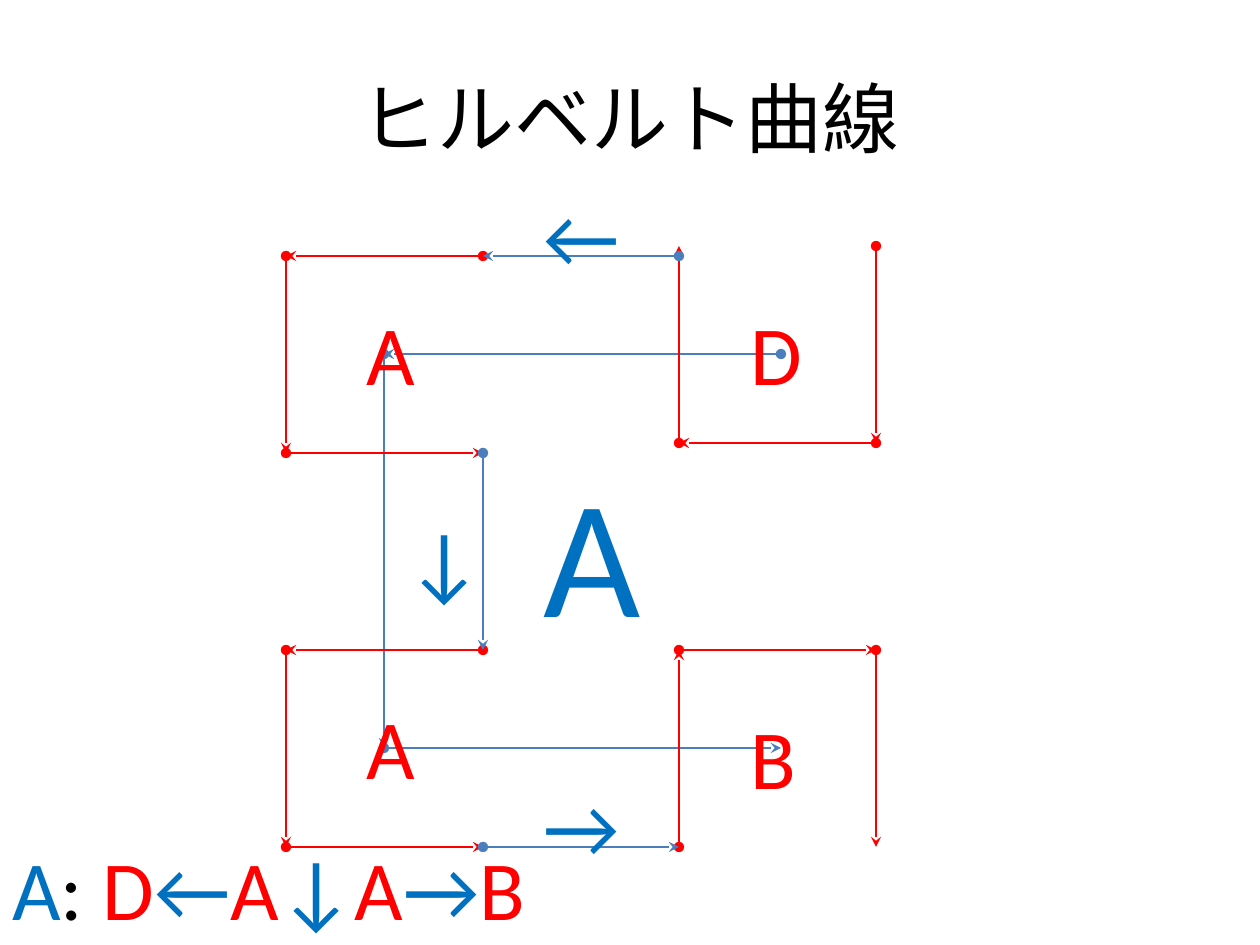
from dataclasses import dataclass
from itertools import pairwise

from lxml import etree
from pptx import Presentation
from pptx import util as u
from pptx.dml.color import RGBColor
from pptx.enum import shapes, text
from pptx.oxml.ns import qn

PX = 914400 / 126
SIDE = 197
LEFT, RIGHT = 286, 679
TOP, BOTTOM = 256, 650
LETTER_HEIGHT = 115
ARROW_WIDTH = 102

TURNS = {
    "A": [(1, 0), (0, 0), (0, 1), (1, 1)],
    "B": [(0, 1), (0, 0), (1, 0), (1, 1)],
    "D": [(1, 0), (1, 1), (0, 1), (0, 0)],
}


@dataclass(frozen=True)
class Theme:
    """Colours, font and type sizes of the slide."""

    ink: str = "000000"
    cell: str = "FF0000"
    link: str = "4B7EBC"
    step: str = "0070C0"
    font: str = "Calibri"
    title: int = 44
    letter: int = 48
    big_letter: int = 96


THEME = Theme()
TITLE_FORMAT = {
    "word_wrap": True,
    "auto_size": text.MSO_AUTO_SIZE.NONE,
    "vertical_anchor": text.MSO_ANCHOR.MIDDLE,
}
LABEL_FORMAT = {
    "word_wrap": False,
    "auto_size": text.MSO_AUTO_SIZE.SHAPE_TO_FIT_TEXT,
}


def px(length):
    """Turn pixels into EMU."""
    return u.Emu(round(length * PX))


def apply_format(target, values):
    """Set each named attribute of the target."""
    for name, value in values.items():
        setattr(target, name, value)


def add_line_of_text(slide, box, runs, size, frame_format):
    """Add a text box with one line of coloured runs and return its paragraph."""
    frame = slide.shapes.add_textbox(*map(px, box)).text_frame
    apply_format(frame, frame_format)
    line = frame.paragraphs[0]
    for wording, colour in runs:
        run = line.add_run()
        run.text = wording
        apply_format(run.font, {"name": THEME.font, "size": u.Pt(size)})
        run.font.color.rgb = RGBColor.from_string(colour)
    return line


def add_title(slide, wording):
    """Add the centred title."""
    line = add_line_of_text(slide, (63, 38, 1134, 157), [(wording, THEME.ink)],
                            THEME.title, TITLE_FORMAT)
    line.alignment = text.PP_ALIGN.CENTER


def add_label(slide, box, runs, size=THEME.letter):
    """Add a label that fits its text."""
    add_line_of_text(slide, box, runs, size, LABEL_FORMAT)


def add_arrow(slide, start, end, colour):
    """Add a thin arrow with a dot at its start."""
    arrow = slide.shapes.add_connector(
        shapes.MSO_CONNECTOR.STRAIGHT, *map(px, (*start, *end)))
    arrow.line.width = u.Pt(1)
    arrow.line.color.rgb = RGBColor.from_string(colour)
    properties = arrow._element.spPr
    outline = properties.find(qn("a:ln"))
    for tag, kind in {"a:headEnd": "oval", "a:tailEnd": "stealth"}.items():
        etree.SubElement(outline, qn(tag), type=kind)
    etree.SubElement(properties, qn("a:effectLst"))


def add_turn(slide, turn, left, top, colour, width=SIDE, height=SIDE):
    """Draw one U-shaped turn of the curve, arrow by arrow."""
    corners = [(left + width * x, top + height * y) for x, y in TURNS[turn]]
    for start, end in pairwise(corners):
        add_arrow(slide, start, end, colour)


def add_cells(slide):
    """Draw the four small turns of the curve."""
    cells = [("A", LEFT, TOP), ("D", RIGHT, TOP - 10),
             ("A", LEFT, BOTTOM), ("B", RIGHT, BOTTOM)]
    for turn, left, top in cells:
        add_turn(slide, turn, left, top, THEME.cell)


def add_links(slide):
    """Join the four turns in the order of the curve."""
    inner = LEFT + SIDE
    links = [((RIGHT, TOP), (inner, TOP)),
             ((inner, TOP + SIDE), (inner, BOTTOM)),
             ((inner, BOTTOM + SIDE), (RIGHT, BOTTOM + SIDE))]
    for start, end in links:
        add_arrow(slide, start, end, THEME.link)


def add_cell_letters(slide):
    """Name each small turn."""
    letters = [("D", 738, 295, 78), ("A", 354, 295, 74),
               ("A", 354, 689, 74), ("B", 738, 699, 72)]
    for letter, left, top, width in letters:
        add_label(slide, (left, top, width, LETTER_HEIGHT), [(letter, THEME.cell)])


def add_step_arrows(slide):
    """Show the direction of each link."""
    for sign, left, top in [("←", 531, 177), ("↓", 394, 502), ("→", 531, 767)]:
        add_label(slide, (left, top, ARROW_WIDTH, LETTER_HEIGHT), [(sign, THEME.step)])


def add_rule(slide, replacement):
    """Write which turns and steps replace the big A."""
    runs = [("A", THEME.step), (": ", THEME.ink)]
    runs += [(sign, THEME.cell if sign in TURNS else THEME.step)
             for sign in replacement]
    add_label(slide, (0, 830, 543, LETTER_HEIGHT), runs)


def main():
    """Build and save the slide."""
    deck = Presentation()
    apply_format(deck, {"slide_width": px(1260), "slide_height": px(945)})
    slide = deck.slides.add_slide(deck.slide_layouts[6])
    add_title(slide, "ヒルベルト曲線")
    add_turn(slide, "A", 384, 354, THEME.link, width=397, height=394)
    add_label(slide, (531, 443, 123, 217), [("A", THEME.step)], THEME.big_letter)
    add_rule(slide, "D←A↓A→B")
    add_cells(slide)
    add_links(slide)
    add_cell_letters(slide)
    add_step_arrows(slide)
    deck.save("out.pptx")


if __name__ == "__main__":
    main()
